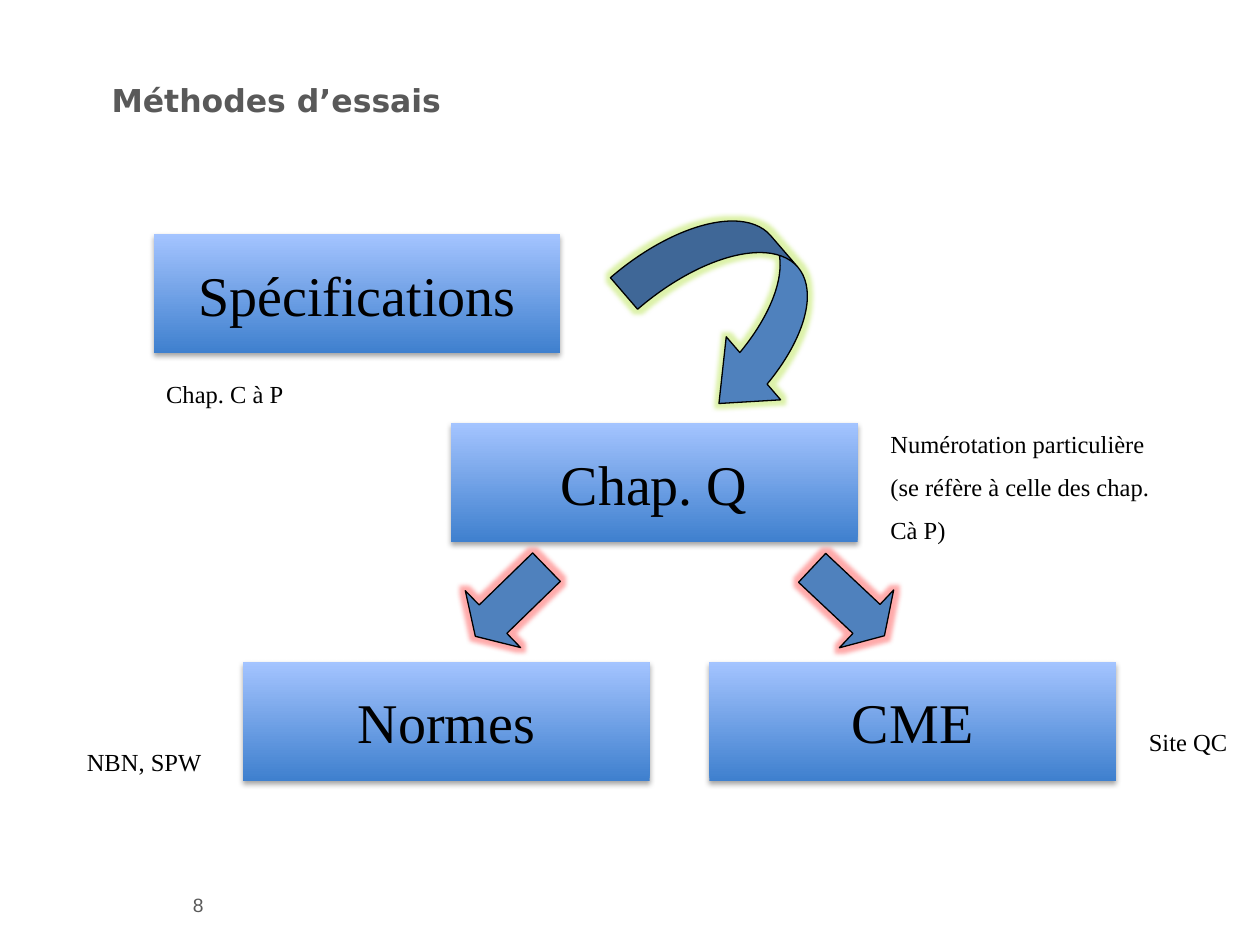
"""Build the slide on test methods: four boxes, three arrows and their notes."""
from dataclasses import dataclass

from lxml import etree
from pptx import Presentation
from pptx import util as u
from pptx.dml.color import RGBColor
from pptx.enum import shapes, text
from pptx.oxml import ns


@dataclass(frozen=True)
class Theme:
    ink: str = "000000"
    gray: str = "595959"
    deep: str = "3F80CE"
    pale: str = "A4C4FF"
    blue: str = "4F81BD"
    lime: str = "B3E242"
    red: str = "FF4444"
    serif: str = "Times New Roman"
    sans: str = "Arial"
    head: str = "DejaVu Sans"
    tiny: int = 11
    small: int = 14
    mid: int = 18
    large: int = 32


look = Theme()


def write(shape, words, size=look.small, font=look.serif, color=look.ink, bold=False,
          align=text.PP_ALIGN.LEFT, anchor=text.MSO_ANCHOR.TOP, inset=0.25):
    frame = shape.text_frame
    frame.word_wrap = True
    frame.vertical_anchor = anchor
    frame.margin_left = frame.margin_right = u.Cm(inset)
    frame.text = words
    for index, para in enumerate(frame.paragraphs):
        para.alignment = align
        para.space_before = u.Pt(size * 0.54 if index else 0)
        para.font.size = u.Pt(size)
        para.font.name = font
        para.font.bold = bold
        para.font.color.rgb = RGBColor.from_string(color)


def effect(shape, kind, color, alpha, **sides):
    shape.shadow.inherit = False
    group = shape._element.spPr.find(ns.qn("a:effectLst"))
    node = etree.SubElement(group, ns.qn(f"a:{kind}"), {k: str(v) for k, v in sides.items()})
    tint = etree.SubElement(node, ns.qn("a:srgbClr"), val=color)
    etree.SubElement(tint, ns.qn("a:alpha"), val=str(alpha * 1000))


deck = Presentation()
deck.slide_width, deck.slide_height = u.Cm(25.4), u.Cm(19.05)
slide = deck.slides.add_slide(deck.slide_layouts[6])
form = shapes.MSO_SHAPE

title = slide.shapes.add_textbox(u.Cm(2), u.Cm(1.5), u.Cm(22), u.Cm(2.49))
write(title, "Méthodes d’essais", size=look.mid, font=look.head, color=look.gray, bold=True)

for words, left, top in (
    ("Spécifications", 3.1, 4.72),
    ("Chap. Q", 9.09, 8.53),
    ("CME", 14.3, 13.34),
    ("Normes", 4.9, 13.34),
):
    box = slide.shapes.add_shape(form.RECTANGLE, u.Cm(left), u.Cm(top), u.Cm(8.2), u.Cm(2.4))
    box.line.fill.background()
    box.fill.gradient()
    box.fill.gradient_angle = 90
    for stop, color in zip(box.fill.gradient_stops, (look.deep, look.pale)):
        stop.color.rgb = RGBColor.from_string(color)
    effect(box, "outerShdw", look.ink, 35, blurRad=u.Pt(3.1), dist=u.Pt(1.8),
           dir=5400000, rotWithShape=0)
    write(box, words, size=look.large, align=text.PP_ALIGN.CENTER,
          anchor=text.MSO_ANCHOR.MIDDLE)

for kind, left, top, width, height, turn, bends, glow in (
    (form.CURVED_LEFT_ARROW, 13.31, 4.11, 3, 4.19, 319.2, (0.28, 0.56, 0.33), look.lime),
    (form.LEFT_ARROW, 9.3, 11.33, 2, 1.6, 315.8, (0.5, 0.31), look.red),
    (form.LEFT_ARROW, 16.1, 11.33, 2, 1.6, 223.2, (0.5, 0.31), look.red),
):
    arrow = slide.shapes.add_shape(kind, u.Cm(left), u.Cm(top), u.Cm(width), u.Cm(height))
    arrow.rotation = turn
    for index, bend in enumerate(bends):
        arrow.adjustments[index] = bend
    arrow.fill.solid()
    arrow.fill.fore_color.rgb = RGBColor.from_string(look.blue)
    arrow.line.color.rgb = RGBColor.from_string(look.ink)
    arrow.line.width = u.Pt(0.75)
    effect(arrow, "glow", glow, 45, rad=u.Pt(5))

for words, left, top, width, height in (
    ("Chap. C à P", 3.1, 7.52, 3.4, 0.84),
    ("Numérotation particulière\n(se réfère à celle des chap.\nCà P)", 17.7, 8.53, 6.6, 2.64),
    ("NBN, SPW", 1.5, 14.94, 3.2, 0.84),
    ("Site QC", 22.91, 14.53, 2.21, 0.84),
):
    note = slide.shapes.add_textbox(u.Cm(left), u.Cm(top), u.Cm(width), u.Cm(height))
    write(note, words)

page = slide.shapes.add_textbox(u.Cm(3.89), u.Cm(17.98), u.Cm(5), u.Cm(0.51))
write(page, "8", size=look.tiny, font=look.sans, color=look.gray,
      anchor=text.MSO_ANCHOR.MIDDLE, inset=0)

deck.save("out.pptx")
